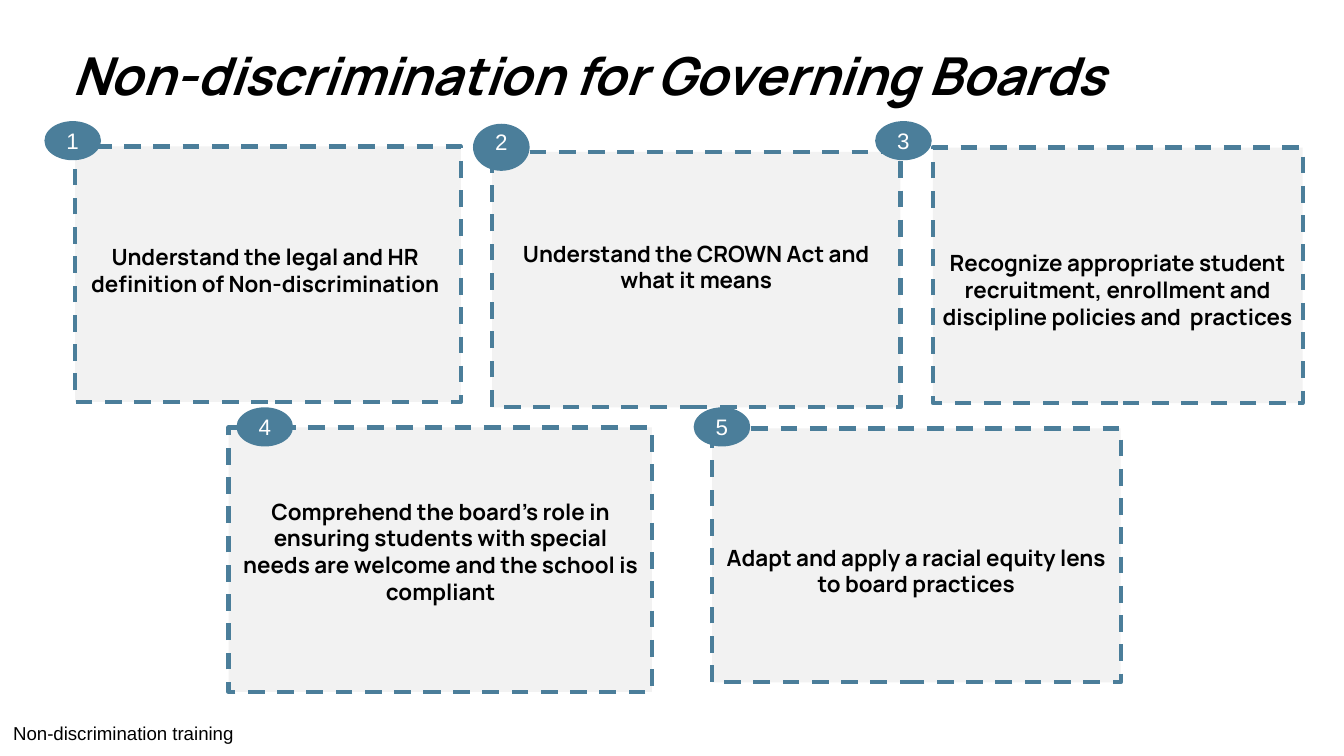
from dataclasses import dataclass
from typing import Any

from pptx import Presentation
from pptx.dml.color import RGBColor
from pptx.enum.dml import MSO_LINE
from pptx.enum.shapes import MSO_SHAPE
from pptx.enum.text import MSO_ANCHOR, PP_ALIGN
from pptx.util import Cm, Pt

BLACK = RGBColor(0x00, 0x00, 0x00)
WHITE = RGBColor(0xFF, 0xFF, 0xFF)
BLUE = RGBColor(0x4B, 0x7E, 0x9A)
GREY = RGBColor(0xF2, 0xF2, 0xF2)

TITLE = {"name": "Manrope", "size": Pt(28), "bold": True, "italic": True}
GOAL = {"name": "Manrope", "size": Pt(12), "bold": True}
COUNT = {"name": "Arial", "size": Pt(12), "bold": False}
FOOT = {"name": "Arial", "size": Pt(10), "bold": False}
EDGE = {"width": Pt(2.25), "dash_style": MSO_LINE.DASH}


@dataclass(frozen=True)
class Box:
    left: float
    top: float
    width: float
    height: float

    def place(self) -> tuple[Cm, Cm, Cm, Cm]:
        return Cm(self.left), Cm(self.top), Cm(self.width), Cm(self.height)


@dataclass(frozen=True)
class Goal:
    text: str
    card: Box
    label: Box
    badge: Box
    lift: float = 0


GOALS = (
    Goal("Understand the legal and HR definition of Non-discrimination",
         Box(1.42, 2.77, 7.29, 4.83), Box(1.37, 3.05, 7.29, 4.11),
         Box(0.84, 2.29, 1.07, 0.74)),
    Goal("Understand the CROWN Act and what it means",
         Box(9.3, 2.87, 7.72, 4.83), Box(9.3, 2.22, 7.72, 5.64),
         Box(8.94, 2.34, 1.07, 0.89), 0.2),
    Goal("Recognize appropriate student recruitment, enrollment and "
         "discipline policies and  practices",
         Box(17.63, 2.79, 6.99, 4.83), Box(17.63, 3.28, 6.99, 4.39),
         Box(16.54, 2.29, 1.07, 0.74)),
    Goal("Comprehend the board’s role in ensuring students with special "
         "needs are welcome and the school is compliant",
         Box(4.32, 8.08, 8, 5), Box(4.47, 8.1, 7.72, 4.65),
         Box(4.47, 7.7, 1.07, 0.74)),
    Goal("Adapt and apply a racial equity lens to board practices",
         Box(13.46, 8.1, 7.72, 4.8), Box(13.46, 8.12, 7.72, 5.33),
         Box(13.11, 7.7, 1.07, 0.74)),
)


def apply(target: Any, style: dict[str, Any]) -> None:
    for key, value in style.items():
        setattr(target, key, value)


def write(shape: Any, text: str, style: dict[str, Any], inset: float,
          align: PP_ALIGN = PP_ALIGN.CENTER, color: RGBColor = BLACK,
          lift: float = 0, space: float = 1) -> None:
    frame = shape.text_frame
    apply(frame, {
        "word_wrap": True,
        "vertical_anchor": MSO_ANCHOR.MIDDLE,
        "margin_left": Cm(inset),
        "margin_right": Cm(inset),
        "margin_top": Cm(inset),
        "margin_bottom": Cm(inset + lift),
    })
    line = frame.paragraphs[0]
    apply(line, {"alignment": align, "line_spacing": space})
    run = line.add_run()
    run.text = text
    apply(run.font, style)
    run.font.color.rgb = color


def draw(slide: Any, kind: MSO_SHAPE, box: Box, fill: RGBColor) -> Any:
    shape = slide.shapes.add_shape(kind, *box.place())
    shape.shadow.inherit = False
    shape.fill.solid()
    shape.fill.fore_color.rgb = fill
    return shape


def draw_card(slide: Any, goal: Goal) -> None:
    card = draw(slide, MSO_SHAPE.RECTANGLE, goal.card, GREY)
    card.line.color.rgb = BLUE
    apply(card.line, EDGE)
    label = slide.shapes.add_textbox(*goal.label.place())
    write(label, goal.text, GOAL, 0.1)


def draw_badge(slide: Any, goal: Goal, count: int) -> None:
    badge = draw(slide, MSO_SHAPE.OVAL, goal.badge, BLUE)
    badge.line.fill.background()
    write(badge, str(count), COUNT, 0, color=WHITE, lift=goal.lift)


def main() -> None:
    deck = Presentation()
    apply(deck, {"slide_width": Cm(25.4), "slide_height": Cm(14.29)})
    slide = deck.slides.add_slide(deck.slide_layouts[6])

    foot = slide.shapes.add_textbox(*Box(0, 13.44, 5.13, 0.84).place())
    write(foot, "Non-discrimination training", FOOT, 0.25, PP_ALIGN.LEFT)
    title = slide.shapes.add_textbox(*Box(1.19, 0.69, 22.4, 1.6).place())
    write(title, "Non-discrimination for Governing Boards", TITLE, 0.18,
          PP_ALIGN.LEFT, space=0.9)

    for goal in GOALS:
        draw_card(slide, goal)
    for count, goal in enumerate(GOALS, 1):
        draw_badge(slide, goal, count)

    deck.save("out.pptx")


if __name__ == "__main__":
    main()
